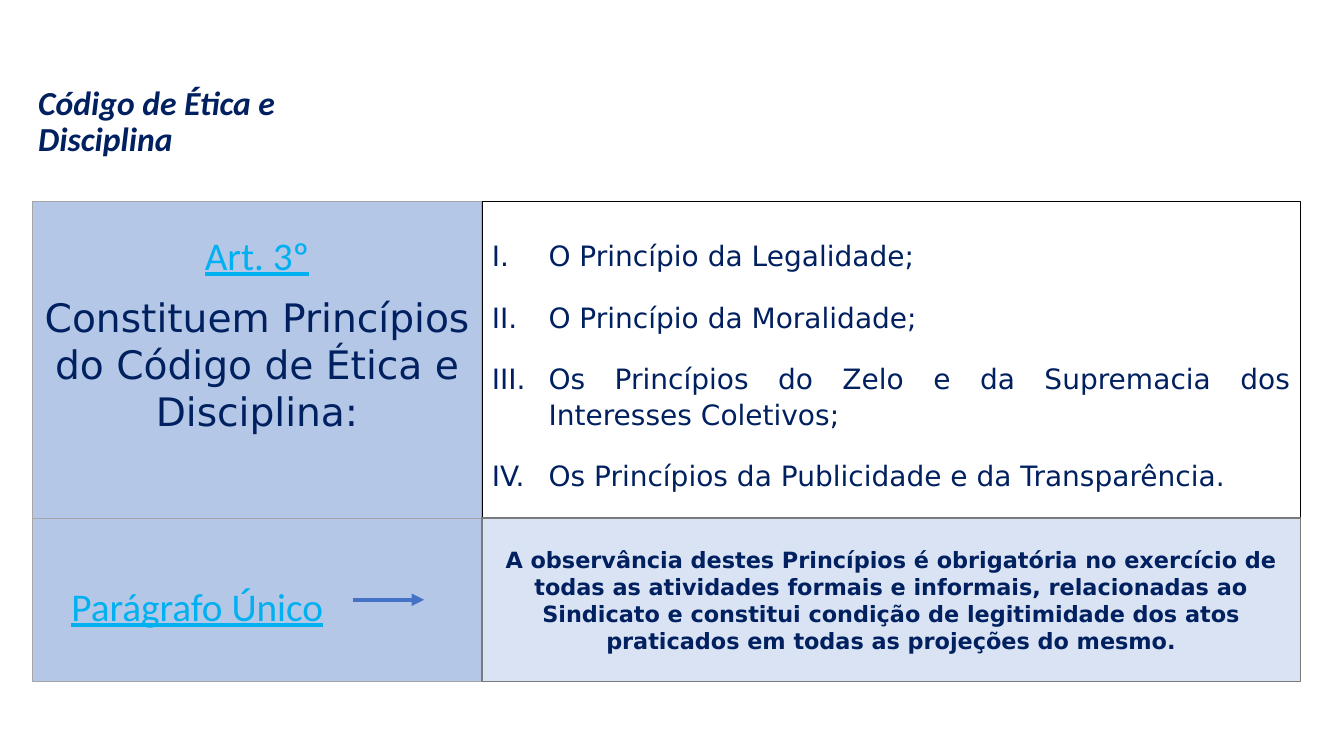
"""Build the slide on the principles of the code of ethics and discipline."""
from lxml import etree
from pptx import Presentation
from pptx.dml.color import RGBColor
from pptx.enum.shapes import MSO_CONNECTOR, MSO_SHAPE
from pptx.enum.text import MSO_ANCHOR, PP_ALIGN
from pptx.oxml.ns import qn
from pptx.util import Pt

RECT, STRAIGHT = MSO_SHAPE.RECTANGLE, MSO_CONNECTOR.STRAIGHT
TOP, MIDDLE = MSO_ANCHOR.TOP, MSO_ANCHOR.MIDDLE
LEFT, CENTER, JUSTIFY = PP_ALIGN.LEFT, PP_ALIGN.CENTER, PP_ALIGN.JUSTIFY

NAVY = RGBColor(0x00, 0x20, 0x60)
SKY = RGBColor(0x00, 0xB0, 0xF0)
BLUE = RGBColor(0x44, 0x72, 0xC4)
MID_BLUE = RGBColor(0xB4, 0xC7, 0xE7)
PALE_BLUE = RGBColor(0xDA, 0xE3, 0xF3)
GRAY = RGBColor(0xA5, 0xA5, 0xA5)
DARK_GRAY = RGBColor(0x7A, 0x7A, 0x7A)
BLACK = RGBColor(0x00, 0x00, 0x00)

COLS = [(23, 321.2), (344.2, 584.6)]
ROWS = [(144, 226.1), (370.1, 116.6)]
PRINCIPLES = [
    "O Princípio da Legalidade;",
    "O Princípio da Moralidade;",
    "Os Princípios do Zelo e da Supremacia dos Interesses Coletivos;",
    "Os Princípios da Publicidade e da Transparência.",
]


def add_panel(col, row, fill, line, width, anchor, inset_top):
    """Add one bordered panel of the grid and return its text frame."""
    (x, w), (y, h) = COLS[col], ROWS[row]
    sp = s.shapes.add_shape(RECT, Pt(x), Pt(y), Pt(w), Pt(h))
    sp.shadow.inherit = False
    if fill is None:
        sp.fill.background()
    else:
        sp.fill.solid()
        sp.fill.fore_color.rgb = fill
    sp.line.color.rgb = line
    sp.line.width = Pt(width)
    tf = sp.text_frame
    tf.word_wrap = True
    tf.vertical_anchor = anchor
    tf.margin_top = Pt(inset_top)
    return tf


def write(p, text, size, font, color, align, spacing=1.0):
    """Set the text of a paragraph and return its formatted run."""
    p.text = text
    p.alignment = align
    p.line_spacing = spacing
    r = p.runs[0]
    r.font.size = Pt(size)
    r.font.name = font
    r.font.color.rgb = color
    return r


prs = Presentation()
prs.slide_width, prs.slide_height = Pt(960), Pt(540)
s = prs.slides.add_slide(prs.slide_layouts[6])

tf = add_panel(0, 1, MID_BLUE, GRAY, 0.5, MIDDLE, 12)
tf.margin_left = Pt(28)
r = write(tf.paragraphs[0], "Parágrafo Único", 28, "Calibri", SKY, LEFT)
r.font.underline = True

tf = add_panel(0, 0, MID_BLUE, GRAY, 0.5, TOP, 25)
r = write(tf.paragraphs[0], "Art. 3º", 28, "Calibri", SKY, CENTER, 0.9)
r.font.underline = True
p = tf.add_paragraph()
write(p, "Constituem Princípios do Código de Ética e Disciplina:",
      28, "DejaVu Sans", NAVY, CENTER)
p.space_before = Pt(10)

tf = add_panel(1, 0, None, BLACK, 0.25, TOP, 25)
for i, principle in enumerate(PRINCIPLES):
    p = tf.add_paragraph() if i else tf.paragraphs[0]
    pPr = p._p.get_or_add_pPr()
    pPr.set("marL", str(Pt(40.5)))
    pPr.set("indent", str(-Pt(40.5)))
    etree.SubElement(pPr, qn("a:buAutoNum"), type="romanUcPeriod")
    write(p, principle, 20, "DejaVu Sans", NAVY, JUSTIFY, 1.07)
    p.space_before = Pt(10 if i else 0)
    p.space_after = Pt(8)

tf = add_panel(1, 1, PALE_BLUE, DARK_GRAY, 1, MIDDLE, 3.6)
r = write(tf.paragraphs[0],
          "A observância destes Princípios é obrigatória no exercício de todas as "
          "atividades formais e informais, relacionadas ao Sindicato e constitui "
          "condição de legitimidade dos atos praticados em todas as projeções do mesmo.",
          16, "DejaVu Sans", NAVY, CENTER)
r.font.bold = True

arrow = s.shapes.add_connector(STRAIGHT, Pt(252), Pt(428.4), Pt(303), Pt(428.4))
arrow.line.color.rgb = BLUE
arrow.line.width = Pt(3)
etree.SubElement(arrow.line._get_or_add_ln(), qn("a:tailEnd"), type="triangle")
etree.SubElement(arrow._element.spPr, qn("a:effectLst"))

title = s.shapes.add_textbox(Pt(20.2), Pt(58.3), Pt(272.9), Pt(26.6))
tf = title.text_frame
tf.word_wrap = True
r = write(tf.paragraphs[0], "Código de Ética e Disciplina", 24, "Calibri", NAVY, LEFT, 0.9)
r.font.bold = r.font.italic = True

prs.save("out.pptx")
